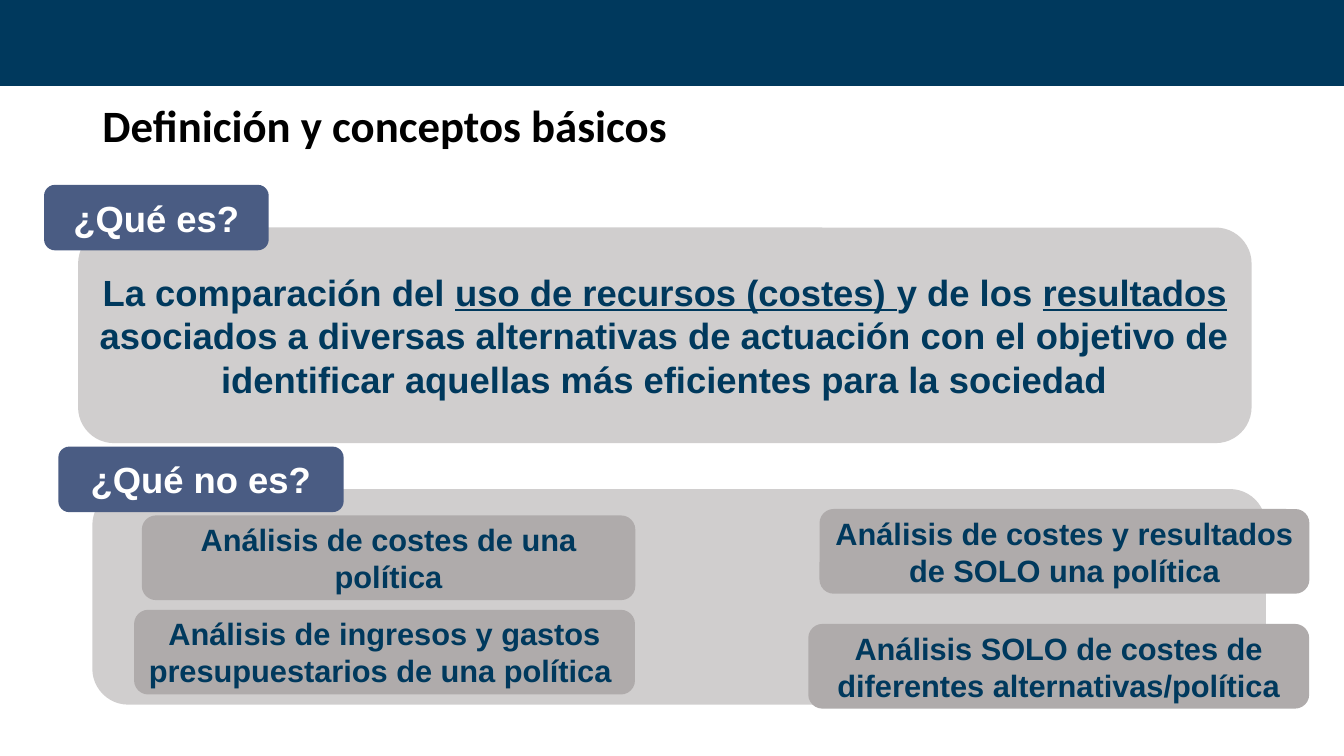
from pptx import Presentation
from pptx.dml.color import RGBColor as RGB
from pptx.enum.shapes import MSO_SHAPE as SHAPE
from pptx.enum.text import MSO_ANCHOR as ANCHOR, MSO_AUTO_SIZE as FIT, PP_ALIGN as ALIGN
from pptx.util import Pt

COLORS = {
    "navy": "00395D",
    "slate": "4A5C83",
    "pale": "D0CECE",
    "gray": "AFABAB",
    "white": "FFFFFF",
    "black": "000000",
}

MEANING = [
    ("La comparación del ", False),
    ("uso de recursos (costes) ", True),
    ("y de los ", False),
    ("resultados", True),
    (" asociados a diversas alternativas de actuación con el objetivo de "
     "identificar aquellas más eficientes para la sociedad", False),
]

LABELS = [
    ("¿Qué es?", (31.5, 132, 160.5, 46.8)),
    ("¿Qué no es?", (41.7, 319, 203.8, 46.8)),
]

CARDS = [
    ("Análisis de costes de una política", (101.3, 368.2, 352.5, 60.5)),
    ("Análisis de costes y resultados de SOLO una política",
     (585.4, 363.6, 349.9, 60.5)),
    ("Análisis SOLO de costes de diferentes alternativas/política",
     (577.4, 445.7, 357.8, 60.5)),
    ("Análisis de ingresos y gastos presupuestarios de una política ",
     (95.8, 435.6, 357.8, 60.5)),
]


def color(name):
    return RGB.from_string(COLORS[name])


def style(run, size, tone, face="Arial"):
    font = run.font
    font.name, font.size, font.bold = face, Pt(size), True
    font.color.rgb = color(tone)


def add_box(slide, place, fill, kind=SHAPE.ROUNDED_RECTANGLE):
    box = slide.shapes.add_shape(kind, *map(Pt, place))
    box.shadow.inherit = False
    box.fill.solid()
    box.fill.fore_color.rgb = color(fill)
    box.line.fill.background()
    return box


def write(box, parts, size, tone):
    frame = box.text_frame
    frame.word_wrap = True
    frame.vertical_anchor = ANCHOR.MIDDLE
    para = frame.paragraphs[0]
    para.alignment = ALIGN.CENTER
    for text, under in parts:
        run = para.add_run()
        run.text = text
        style(run, size, tone)
        run.font.underline = under


def add_card(slide, text, place):
    card = add_box(slide, place, "gray")
    write(card, [(text, False)], 22, "navy")
    frame = card.text_frame
    frame.margin_left = frame.margin_right = Pt(5.76)
    frame.margin_top = frame.margin_bottom = Pt(2.88)


def add_label(slide, text, place):
    write(add_box(slide, place, "slate"), [(text, False)], 26, "white")


def set_title(slide, text):
    title = slide.shapes.title
    title.left, title.top, title.width, title.height = map(
        Pt, (66, 53.5, 828, 76.3))
    frame = title.text_frame
    frame.text = text
    frame.auto_size = FIT.NONE
    frame.vertical_anchor = ANCHOR.MIDDLE
    para = frame.paragraphs[0]
    para.alignment = ALIGN.LEFT
    para.line_spacing = 0.9
    para.space_after = Pt(12)
    style(para.runs[0], 32, "black", "Calibri")


def main():
    deck = Presentation()
    deck.slide_width, deck.slide_height = Pt(960), Pt(540)
    slide = deck.slides.add_slide(deck.slide_layouts[5])
    band = add_box(slide, (0, 0, 960, 61.2), "navy", SHAPE.RECTANGLE)
    band.line.color.rgb = color("navy")
    band.line.width = Pt(1)
    set_title(slide, "Definición y conceptos básicos")
    panel = add_box(slide, (55.8, 162.5, 838.2, 154), "pale")
    write(panel, MEANING, 26, "navy")
    add_box(slide, (66, 349.3, 838.2, 154), "pale")
    for text, place in LABELS:
        add_label(slide, text, place)
    for text, place in CARDS:
        add_card(slide, text, place)
    deck.save("out.pptx")


if __name__ == "__main__":
    main()
